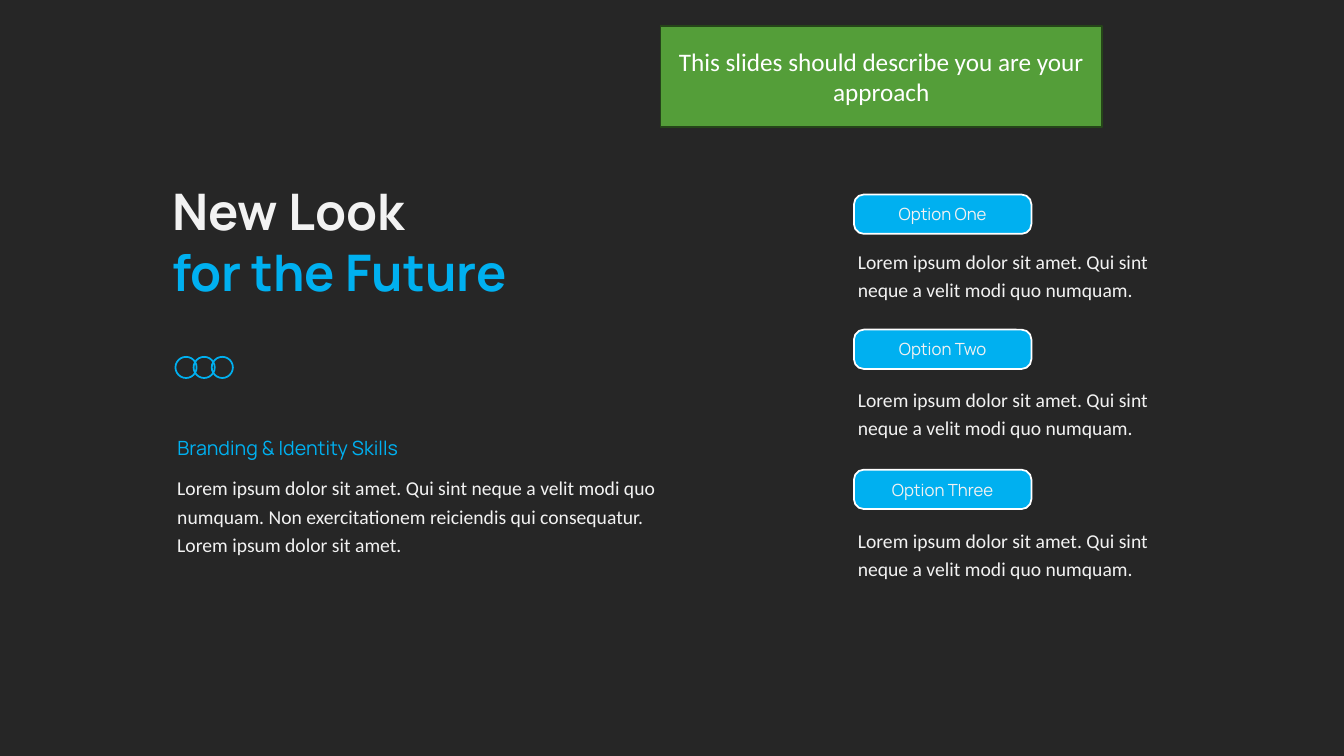
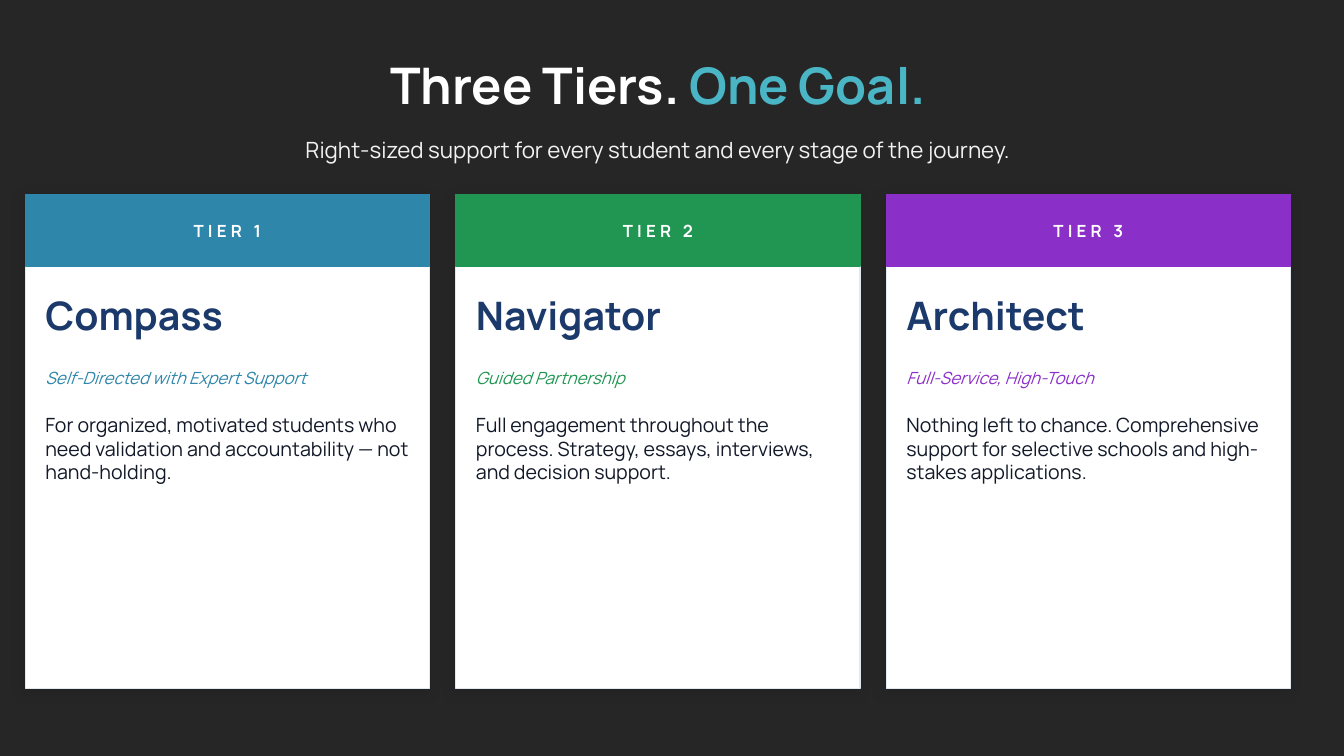
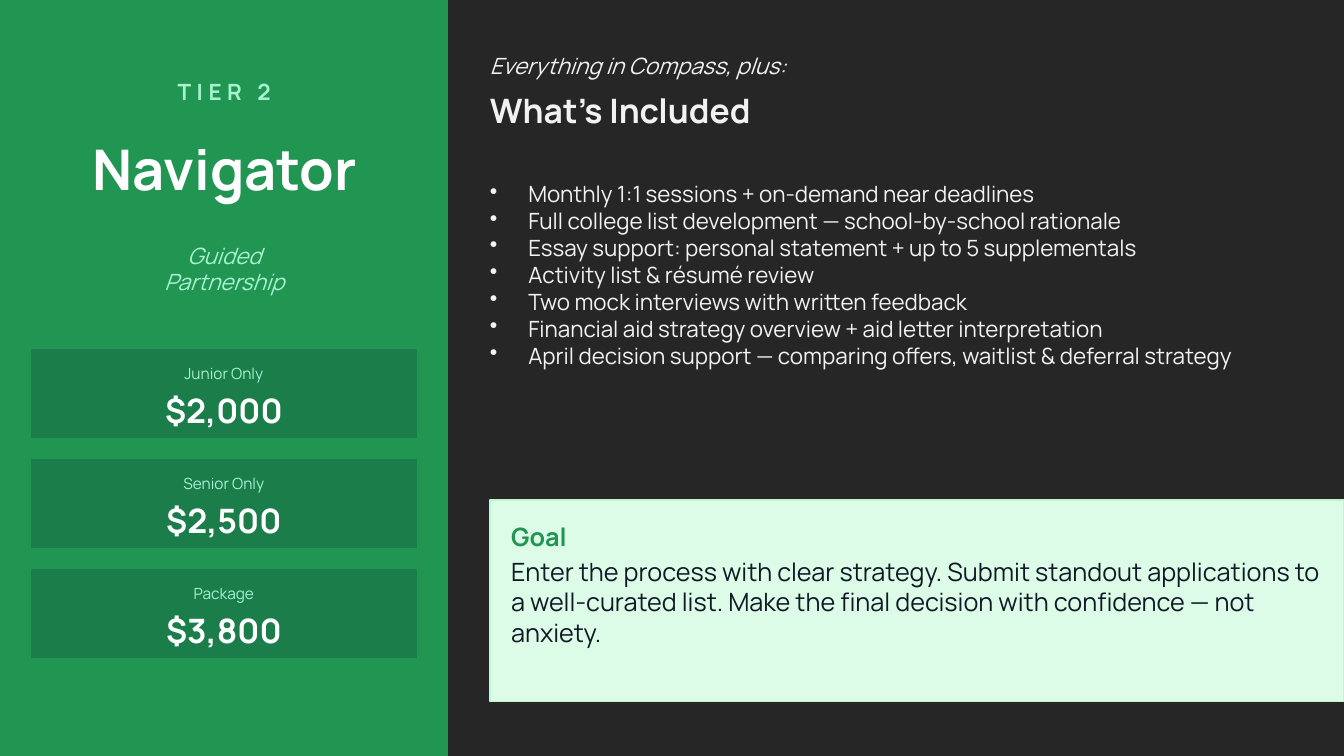
from lxml import etree
from pptx import Presentation
from pptx.dml.color import RGBColor
from pptx.enum.shapes import MSO_SHAPE
from pptx.enum.text import MSO_ANCHOR, PP_ALIGN
from pptx.oxml.ns import qn
from pptx.util import Inches, Pt

RECT, ROUNDED, OVAL = MSO_SHAPE.RECTANGLE, MSO_SHAPE.ROUNDED_RECTANGLE, MSO_SHAPE.OVAL
LEFT, CENTER = PP_ALIGN.LEFT, PP_ALIGN.CENTER
TOP, MIDDLE = MSO_ANCHOR.TOP, MSO_ANCHOR.MIDDLE

# Shared style
WIDTH, HEIGHT = 13.33, 7.5
HEAD_FONT, BODY_FONT = "Manrope", "Calibri"
DARK, WHITE, PALE, INK, NAVY = "262626", "FFFFFF", "F2F2F2", "111827", "1B3A6B"
SKY, TEAL, GREEN, MINT = "00B0F0", "4AB5C4", "219653", "A7F3D0"
DEEP_GREEN = "1A7D4A"
PADDING = (0.1, 0.05)

# Slide 1 content: (name, pill top, text top)
LOREM = "Lorem ipsum dolor sit amet. "
OPTION_TEXT = LOREM + "Qui sint neque a velit modi quo numquam."
SKILLS_TEXT = (OPTION_TEXT + " Non exercitationem reiciendis qui consequatur. "
               + LOREM.strip())
OPTIONS = [
    ("Option One", 1.93, 2.38),
    ("Option Two", 3.27, 3.75),
    ("Option Three", 4.66, 5.15),
]

# Slide 2 content: (label, name, tagline, description, colour)
TIERS = [
    ("TIER 1", "Compass", "Self-Directed with Expert Support",
     "For organized, motivated students who need validation and "
     "accountability — not hand-holding.", "2E86AB"),
    ("TIER 2", "Navigator", "Guided Partnership",
     "Full engagement throughout the process. Strategy, essays, interviews, "
     "and decision support.", GREEN),
    ("TIER 3", "Architect", "Full-Service, High-Touch",
     "Nothing left to chance. Comprehensive support for selective schools and "
     "high-stakes applications.", "8B2FC9"),
]

# Slide 3 content
PRICES = [("Junior Only", "$2,000"), ("Senior Only", "$2,500"), ("Package", "$3,800")]
INCLUDED = [
    "Monthly 1:1 sessions + on-demand near deadlines",
    "Full college list development — school-by-school rationale",
    "Essay support: personal statement + up to 5 supplementals",
    "Activity list & résumé review",
    "Two mock interviews with written feedback",
    "Financial aid strategy overview + aid letter interpretation",
    "April decision support — comparing offers, waitlist & deferral strategy",
]
GOAL = ("Enter the process with clear strategy. Submit standout applications to "
        "a well-curated list. Make the final decision with confidence — not anxiety.")


def rgb(value):
    return RGBColor.from_string(value)


def add_bullet(para, indent=0.38):
    props = para._p.get_or_add_pPr()
    props.set("marL", str(Inches(indent)))
    props.set("indent", str(-Inches(indent)))
    etree.SubElement(props, qn("a:buChar")).set("char", "•")


def write(shape, lines, size, color, font=HEAD_FONT, bold=False, italic=False,
          align=LEFT, anchor=MIDDLE, inset=(0, 0), leading=None, tracking=0,
          bullets=False):
    """Fill a shape with paragraphs; a line is a string or (text, colour) spans."""
    frame = shape.text_frame
    frame.word_wrap = True
    frame.vertical_anchor = anchor
    frame.margin_left = frame.margin_right = Inches(inset[0])
    frame.margin_top = frame.margin_bottom = Inches(inset[1])
    for index, line in enumerate([lines] if isinstance(lines, str) else lines):
        para = frame.add_paragraph() if index else frame.paragraphs[0]
        para.alignment = align
        if leading:
            para.line_spacing = leading
        if bullets:
            add_bullet(para)
        para.font.name, para.font.size = font, Pt(size)
        para.font.bold, para.font.italic = bold, italic
        para.font.color.rgb = rgb(color)
        for text, tint in [(line, None)] if isinstance(line, str) else line:
            span = para.add_run()
            span.text = text
            if tint:
                span.font.color.rgb = rgb(tint)
            if tracking:
                span._r.get_or_add_rPr().set("spc", str(tracking * 100))


def add_text(page, at, lines, size, color, **style):
    box = page.shapes.add_textbox(*map(Inches, at))
    write(box, lines, size, color, **style)


def add_block(page, at, fill, line, weight=1, kind=RECT):
    block = page.shapes.add_shape(kind, *map(Inches, at))
    block.shadow.inherit = False
    if fill:
        block.fill.solid()
        block.fill.fore_color.rgb = rgb(fill)
    else:
        block.fill.background()
    block.line.color.rgb = rgb(line)
    block.line.width = Pt(weight)
    return block


def add_soft_shadow(block):
    effects = block._element.spPr.find(qn("a:effectLst"))
    shadow = etree.SubElement(effects, qn("a:outerShdw"), blurRad=str(Pt(10)),
                              dist=str(Pt(3)), dir=str(135 * 60000),
                              algn="bl", rotWithShape="0")
    tint = etree.SubElement(shadow, qn("a:srgbClr"), val="000000")
    etree.SubElement(tint, qn("a:alpha"), val="10000")


def build_approach(page):
    # Title, rings and skills
    body = dict(font=BODY_FONT, anchor=TOP, inset=PADDING, leading=1.2)
    add_text(page, (1.61, 1.74, 5.71, 1.31),
             ["New Look", [("for the Future", SKY)]], 36, PALE,
             bold=True, anchor=TOP, inset=PADDING)
    for ring in range(3):
        add_block(page, (1.74 + ring * 0.18, 3.54, 0.21, 0.21), None, SKY, 1.25, OVAL)
    add_text(page, (1.66, 4.28, 3.05, 0.34), "Branding & Identity Skills", 14, SKY,
             anchor=TOP, inset=PADDING)
    add_text(page, (1.66, 4.63, 5.3, 0.93), SKILLS_TEXT, 14, PALE, **body)

    # Options
    for name, pill_top, text_top in OPTIONS:
        pill = add_block(page, (8.47, pill_top, 1.76, 0.39), SKY, WHITE, 1.25, ROUNDED)
        pill.adjustments[0] = 0.25
        write(pill, name, 12, PALE, align=CENTER)
        add_text(page, (8.41, text_top, 3.13, 0.65), OPTION_TEXT, 14, PALE, **body)

    # Green note
    note = add_block(page, (6.55, 0.26, 4.38, 1), "549E39", "254519")
    write(note, "This slides should describe you are your approach", 18, WHITE,
          font=BODY_FONT, align=CENTER, inset=PADDING)


def build_tiers(page):
    # Heading
    add_text(page, (0.38, 0.45, 12.29, 0.77),
             [[("Three Tiers. ", None), ("One Goal.", TEAL)]], 36, WHITE,
             bold=True, align=CENTER)
    add_text(page, (0.38, 1.26, 12.29, 0.45),
             "Right-sized support for every student and every stage of the journey.",
             16, PALE, align=CENTER)

    # Cards
    top, card_width, gap, margin = 1.93, 4.01, 0.26, 0.2
    for index, (label, name, tagline, description, color) in enumerate(TIERS):
        left = 0.25 + index * (card_width + gap)
        text_left, text_width = left + margin, card_width - 2 * margin
        add_soft_shadow(add_block(page, (left, top, card_width, 4.9), WHITE, "E2E8F0"))
        band = add_block(page, (left, top, card_width, 0.71), color, color)
        write(band, label, 12, WHITE, bold=True, align=CENTER, tracking=3)
        add_text(page, (text_left, 2.77, text_width, 0.71), name, 28, NAVY, bold=True)
        add_text(page, (text_left, 3.5, text_width, 0.49), tagline, 12, color,
                 italic=True)
        add_text(page, (text_left, 4.1, text_width, 2.32), description, 14, INK,
                 anchor=TOP)


def build_navigator(page):
    # Side panel
    add_block(page, (0, 0, 4.44, HEIGHT), GREEN, GREEN)
    add_text(page, (0.21, 0.67, 4.03, 0.47), "TIER 2", 16, MINT, bold=True,
             align=CENTER, tracking=4)
    add_text(page, (0.21, 1.2, 4.03, 0.93), "Navigator", 40, WHITE, bold=True,
             align=CENTER)
    add_text(page, (0.21, 2.2, 4.03, 0.93), ["Guided", "Partnership"], 16, MINT,
             italic=True, align=CENTER)

    # Prices
    left, width = 0.31, 3.82
    for index, (label, price) in enumerate(PRICES):
        top = 3.47 + index * 1.09
        add_block(page, (left, top, width, 0.87), DEEP_GREEN, DEEP_GREEN)
        add_text(page, (left, top + 0.05, width, 0.37), label, 11, MINT, align=CENTER)
        add_text(page, (left, top + 0.4, width, 0.4), price, 24, WHITE, bold=True,
                 align=CENTER)

    # What is included
    left = 4.86
    width = WIDTH - left
    add_text(page, (left, 0.4, width, 0.51), "Everything in Compass, plus:", 16, PALE,
             italic=True)
    add_text(page, (left, 0.83, width, 0.53), "What's Included", 24, PALE, bold=True)
    add_text(page, (left, 1.79, width, 3.01), INCLUDED, 16, PALE, anchor=TOP,
             bullets=True)

    # Goal
    add_block(page, (left, 4.96, width, 2), "DCFCE7", "BBF7D0")
    add_text(page, (5.07, 5.11, 2.08, 0.43), "Goal", 18, GREEN, bold=True)
    add_text(page, (5.07, 5.52, 8.06, 1.33), GOAL, 18, INK, anchor=TOP)


def main():
    deck = Presentation()
    deck.slide_width, deck.slide_height = Inches(WIDTH), Inches(HEIGHT)
    backdrop = deck.slide_master.background.fill
    backdrop.solid()
    backdrop.fore_color.rgb = rgb(DARK)
    blank = deck.slide_layouts[6]
    for build in (build_approach, build_tiers, build_navigator):
        build(deck.slides.add_slide(blank))
    deck.save("out.pptx")


if __name__ == "__main__":
    main()
